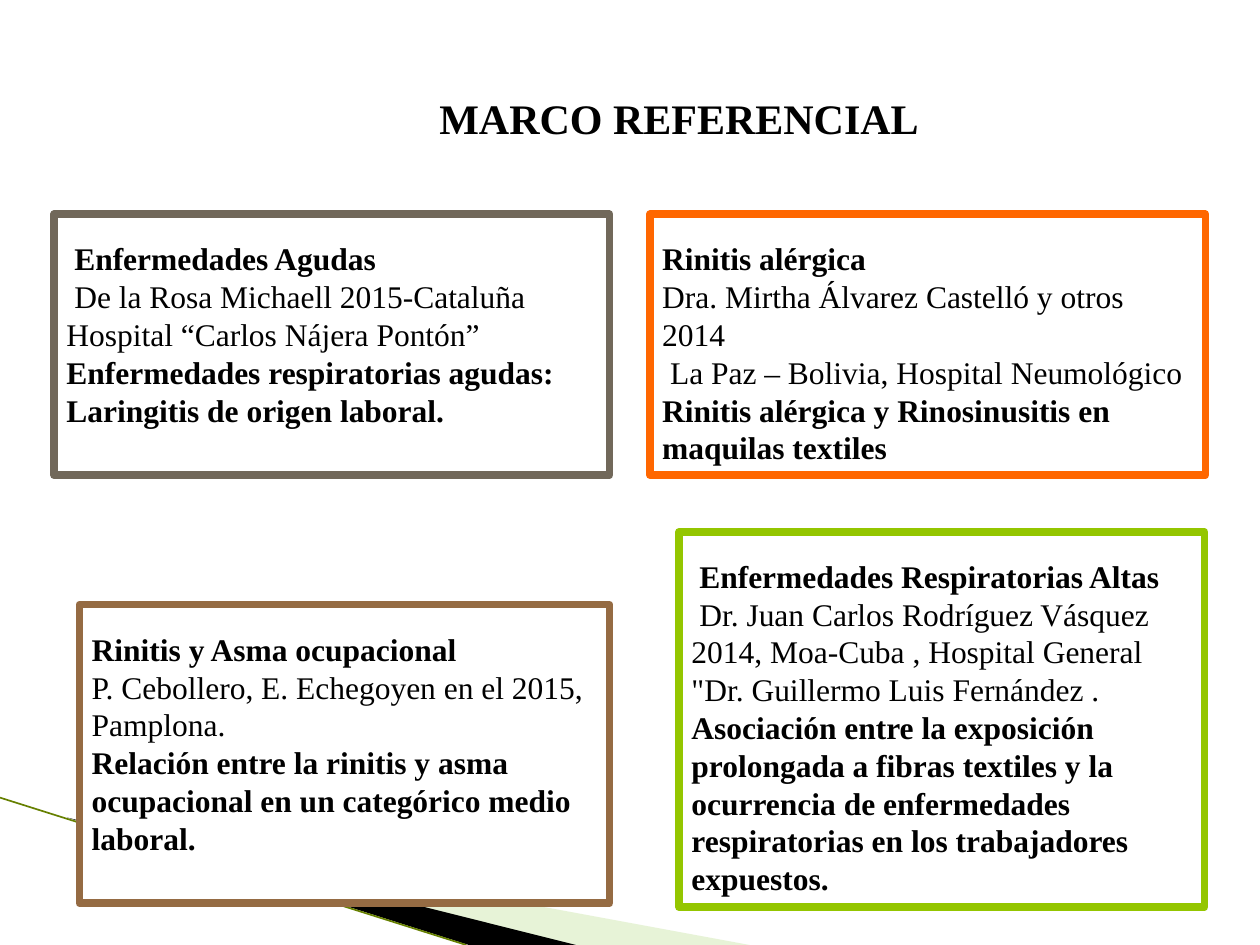
from lxml import etree
from pptx import Presentation
from pptx.dml.color import RGBColor
from pptx.enum.shapes import MSO_CONNECTOR, MSO_SHAPE
from pptx.enum.text import MSO_ANCHOR, MSO_AUTO_SIZE, PP_ALIGN
from pptx.oxml.ns import qn
from pptx.util import Cm, Pt

RECT, LINE = MSO_SHAPE.RECTANGLE, MSO_CONNECTOR.STRAIGHT
TOP, LEFT, MID = MSO_ANCHOR.TOP, PP_ALIGN.LEFT, PP_ALIGN.CENTER
FIXED = MSO_AUTO_SIZE.NONE
FONT = "Times New Roman"
COLORS = {
    "black": "000000", "white": "FFFFFF", "pale": "C3E19D", "edge": "668000",
    "gray": "71685A", "orange": "FF6700", "brown": "956B43", "green": "94C600",
}

# Content: each card has paragraphs of (text, bold) runs
TITLE = "MARCO REFERENCIAL"
CARDS = [
    ("gray", (1.09, 4.32, 11.2, 5.26), [
        [(" Enfermedades Agudas", True)],
        [(" De la Rosa Michaell 2015-Cataluña Hospital “Carlos Nájera Pontón” ", False),
         ("Enfermedades respiratorias agudas: Laringitis de origen laboral.", True)],
    ]),
    ("green", (13.69, 10.72, 10.59, 7.57), [
        [(" Enfermedades Respiratorias Altas", True)],
        [(" Dr. Juan Carlos Rodríguez Vásquez 2014, Moa-Cuba , Hospital General "
          "\"Dr. Guillermo Luis Fernández .", False)],
        [("Asociación entre la exposición prolongada a fibras textiles y la ocurrencia "
          "de enfermedades respiratorias en los trabajadores expuestos.", True)],
    ]),
    ("orange", (13.1, 4.32, 11.2, 5.26), [
        [("Rinitis alérgica", True)],
        [("Dra. Mirtha Álvarez Castelló y otros 2014", False)],
        [(" La Paz – Bolivia, Hospital Neumológico", False)],
        [("Rinitis alérgica y Rinosinusitis en maquilas textiles", True)],
    ]),
    ("brown", (1.6, 12.19, 10.69, 6.02), [
        [("Rinitis y Asma ocupacional", True)],
        [("P. Cebollero, E. Echegoyen en el 2015, Pamplona.", False)],
        [("Relación entre la rinitis y asma ocupacional en un categórico medio laboral.", True)],
    ]),
]
# Corner wedges: colour, opacity in percent, corners
WEDGES = [
    ("pale", 40, [(1.4, 16.52), (15.11, 19.05), (11.58, 19.05)]),
    ("black", 100, [(1.35, 16.48), (11.61, 19.05), (9.45, 19.05)]),
]
EDGE = (0, 16.08, 9.4, 19.05)


def color(name):
    return RGBColor.from_string(COLORS[name])


def write(para, text, size, bold):
    run = para.add_run()
    run.text = text
    font = run.font
    font.name, font.size, font.bold = FONT, Pt(size), bold
    font.color.rgb = color("black")


def setup(frame):
    frame.word_wrap = True
    frame.auto_size = FIXED
    frame.vertical_anchor = TOP


def wedge(slide, name, alpha, points):
    path = [(Cm(x), Cm(y)) for x, y in points]
    pen = slide.shapes.build_freeform(*path[0])
    pen.add_line_segments(path[1:], close=True)
    shape = pen.convert_to_shape()
    shape.shadow.inherit = False
    shape.fill.solid()
    shape.fill.fore_color.rgb = color(name)
    shape.line.fill.background()
    if alpha < 100:
        tint = shape.fill._xPr.find(qn("a:solidFill"))[0]
        etree.SubElement(tint, qn("a:alpha"), val=str(alpha * 1000))


def card(slide, name, place, paras):
    shape = slide.shapes.add_shape(RECT, *map(Cm, place))
    shape.shadow.inherit = False
    shape.fill.solid()
    shape.fill.fore_color.rgb = color("white")
    shape.line.color.rgb = color(name)
    shape.line.width = Pt(4.33)
    frame = shape.text_frame
    setup(frame)
    for i, runs in enumerate(paras):
        para = frame.add_paragraph() if i else frame.paragraphs[0]
        para.alignment = LEFT
        para.line_spacing = 1.0 if i else 1.5
        for text, bold in runs:
            write(para, text, 18, bold)


def main():
    deck = Presentation()
    deck.slide_width, deck.slide_height = Cm(25.4), Cm(19.05)
    slide = deck.slides.add_slide(deck.slide_layouts[5])

    # Corner decoration
    for item in WEDGES:
        wedge(slide, *item)
    edge = slide.shapes.add_connector(LINE, *map(Cm, EDGE))
    edge.line.color.rgb = color("edge")
    edge.line.width = Pt(0.95)
    etree.SubElement(edge._element.spPr, qn("a:effectLst"))

    # Title
    title = slide.shapes.title
    title.left, title.top, title.width, title.height = map(Cm, (7.39, 1.73, 12.6, 3.33))
    setup(title.text_frame)
    para = title.text_frame.paragraphs[0]
    para.alignment = MID
    write(para, TITLE, 24, True)

    # Study cards
    for item in CARDS:
        card(slide, *item)
    deck.save("out.pptx")


if __name__ == "__main__":
    main()
